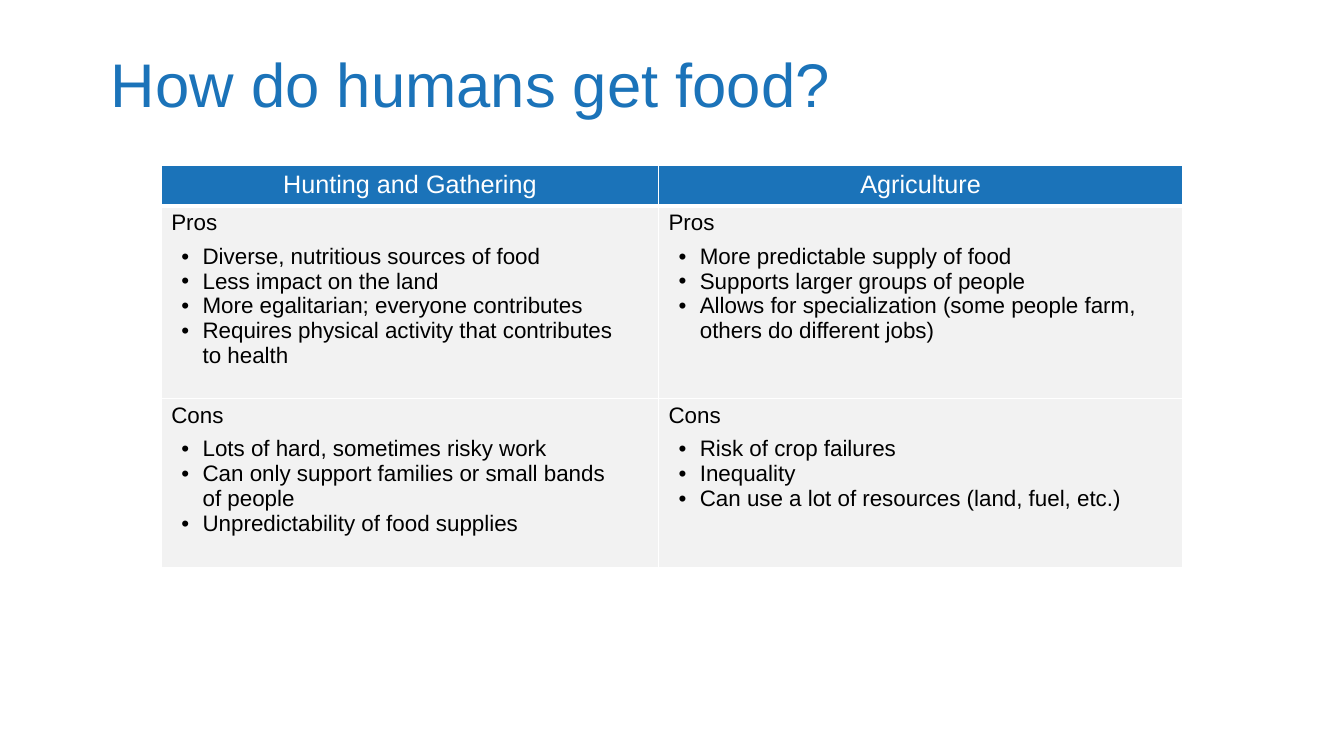
from dataclasses import dataclass

from lxml.etree import SubElement
from pptx import Presentation
from pptx.dml.color import RGBColor
from pptx.enum.text import MSO_ANCHOR, PP_ALIGN
from pptx.oxml.ns import qn
from pptx.util import Inches, Pt


@dataclass(frozen=True)
class Theme:
    font: str = "Arial"
    blue: str = "1B73B9"
    white: str = "FFFFFF"
    gray: str = "F2F2F2"
    black: str = "000000"
    title: int = 44
    head: int = 18
    body: int = 16


@dataclass(frozen=True)
class Block:
    label: str
    points: tuple[str, ...]


@dataclass(frozen=True)
class Way:
    name: str
    share: float
    blocks: tuple[Block, ...]


THEME = Theme()
WIDE, HIGH = Inches(13.33), Inches(7.5)

# Each way of getting food is a column; its width is a share of the slide
WAYS = (
    Way("Hunting and Gathering", 0.37, (
        Block("Pros", (
            "Diverse, nutritious sources of food",
            "Less impact on the land",
            "More egalitarian; everyone contributes",
            "Requires physical activity that contributes \nto health")),
        Block("Cons", (
            "Lots of hard, sometimes risky work",
            "Can only support families or small bands \nof people",
            "Unpredictability of food supplies")))),
    Way("Agriculture", 0.39, (
        Block("Pros", (
            "More predictable supply of food",
            "Supports larger groups of people",
            "Allows for specialization (some people farm, \n"
            "others do different jobs)")),
        Block("Cons", (
            "Risk of crop failures",
            "Inequality",
            "Can use a lot of resources (land, fuel, etc.)")))),
)
ROWS = (0.4, 1.91, 1.68)


def write(para, text: str, size: int, color: str) -> None:
    for i, line in enumerate(text.split("\n")):
        if i:
            para.add_line_break()
        run = para.add_run()
        run.text = line
        run.font.name = THEME.font
        run.font.size = Pt(size)
        run.font.color.rgb = RGBColor.from_string(color)


def bullet(para) -> None:
    props = para._p.get_or_add_pPr()
    props.set("marL", str(Inches(0.31)))
    props.set("indent", str(Inches(-0.21)))
    SubElement(props, qn("a:buFont"), typeface=THEME.font)
    SubElement(props, qn("a:buChar"), char="•")


def paint(cell, color: str, base: int = 1) -> None:
    props = cell._tc.get_or_add_tcPr()
    for side, width in zip("LRTB", (1, 1, 1, base)):
        line = SubElement(props, qn(f"a:ln{side}"), w=str(Pt(width)))
        fill = SubElement(line, qn("a:solidFill"))
        SubElement(fill, qn("a:srgbClr"), val=THEME.white)
    cell.fill.solid()
    cell.fill.fore_color.rgb = RGBColor.from_string(color)


def fill_block(cell, block: Block) -> None:
    paint(cell, THEME.gray)
    frame = cell.text_frame
    label = frame.paragraphs[0]
    label.space_after = Pt(6)
    write(label, block.label, THEME.body, THEME.black)
    for point in block.points:
        para = frame.add_paragraph()
        bullet(para)
        write(para, point, THEME.body, THEME.black)


def add_title(slide, text: str) -> None:
    box = slide.shapes.add_textbox(Inches(1.1), Inches(0.54),
                                   Inches(11.15), Inches(0.79))
    frame = box.text_frame
    frame.word_wrap = True
    frame.vertical_anchor = MSO_ANCHOR.TOP
    frame.margin_left = frame.margin_right = 0
    frame.margin_top = frame.margin_bottom = 0
    para = frame.paragraphs[0]
    para.line_spacing = 0.9
    write(para, text, THEME.title, THEME.blue)


def add_grid(slide, ways: tuple[Way, ...]) -> None:
    width = int(WIDE * sum(way.share for way in ways))
    table = slide.shapes.add_table(
        len(ROWS), len(ways), int(WIDE * 0.12), Inches(1.64),
        width, Inches(sum(ROWS))).table
    table.horz_banding = False
    for row, size in zip(table.rows, ROWS):
        row.height = Inches(size)
    for col, way in enumerate(ways):
        table.columns[col].width = int(WIDE * way.share)
        head = table.cell(0, col)
        paint(head, THEME.blue, 3)
        para = head.text_frame.paragraphs[0]
        para.alignment = PP_ALIGN.CENTER
        write(para, way.name, THEME.head, THEME.white)
        # The header's style is bold unless told otherwise
        para.runs[0].font.bold = False
        for row, block in enumerate(way.blocks, 1):
            fill_block(table.cell(row, col), block)


def main() -> None:
    deck = Presentation()
    deck.slide_width, deck.slide_height = WIDE, HIGH
    slide = deck.slides.add_slide(deck.slide_layouts[6])
    add_title(slide, "How do humans get food?")
    add_grid(slide, WAYS)
    deck.save("out.pptx")


if __name__ == "__main__":
    main()
